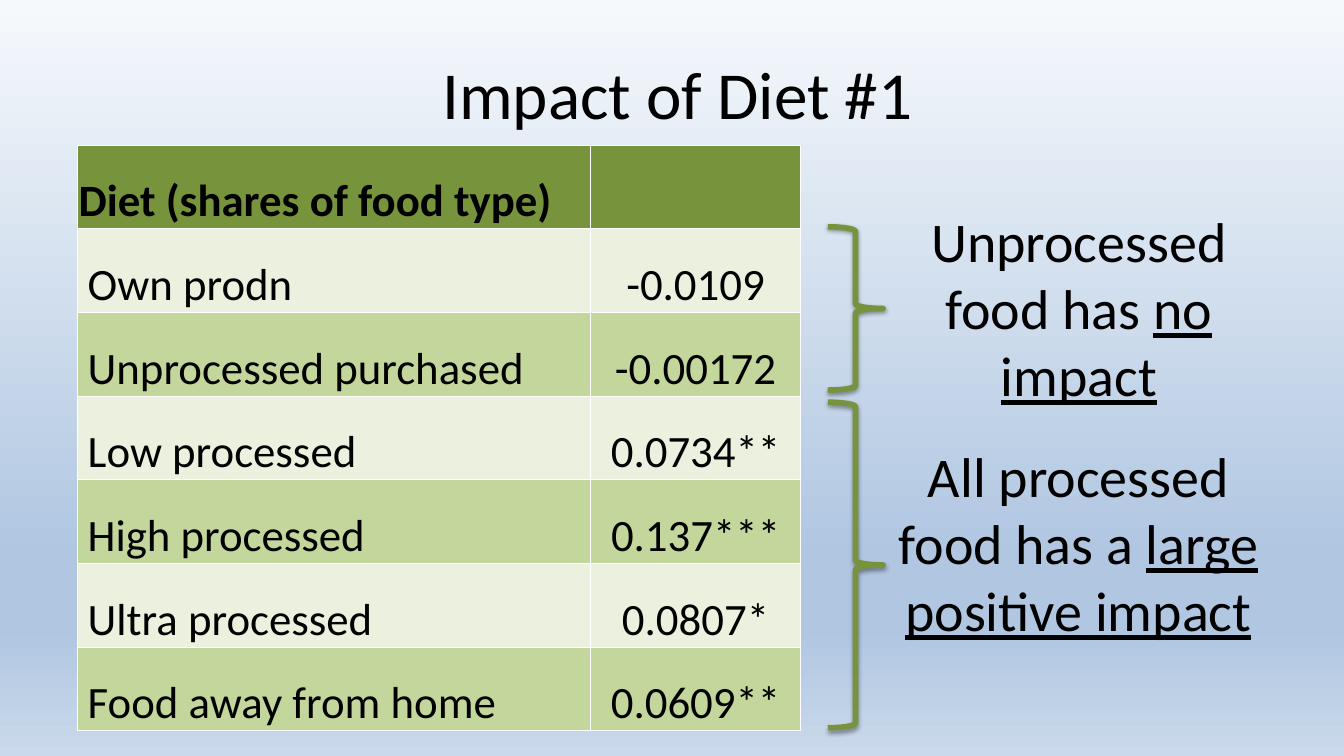
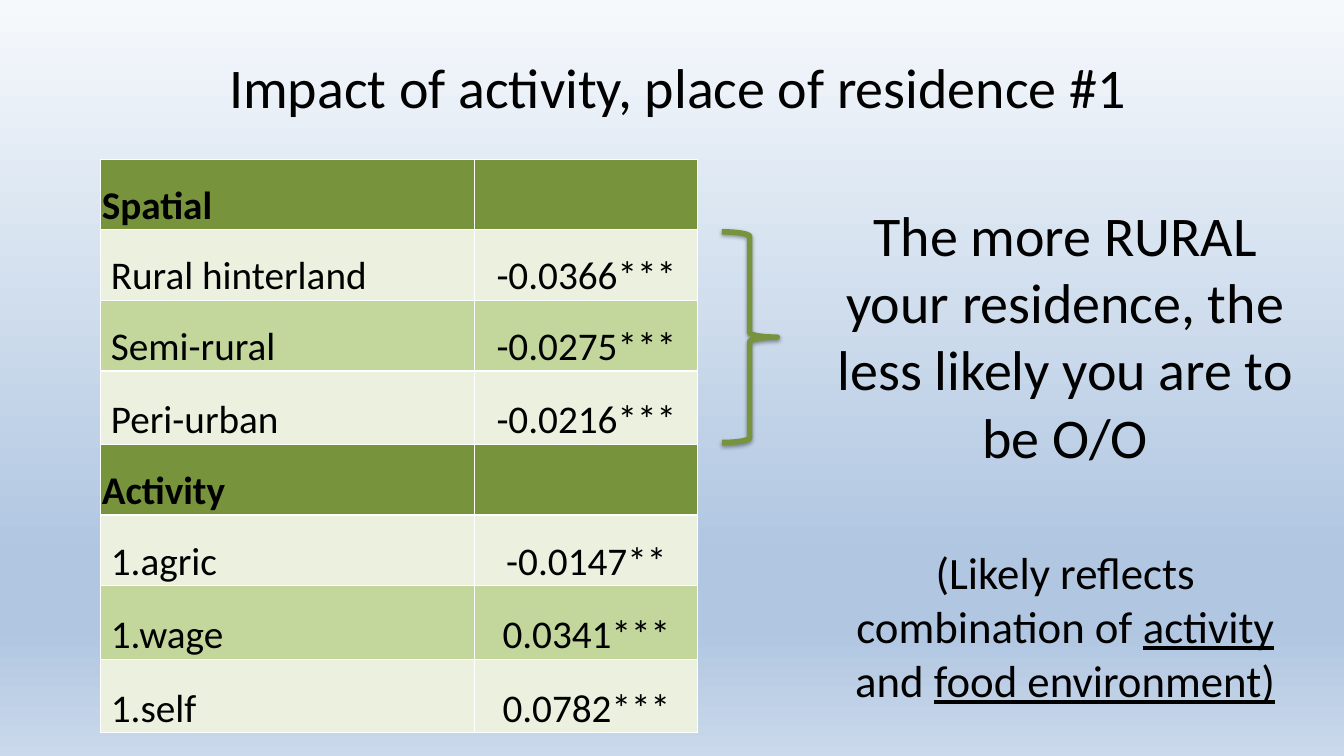
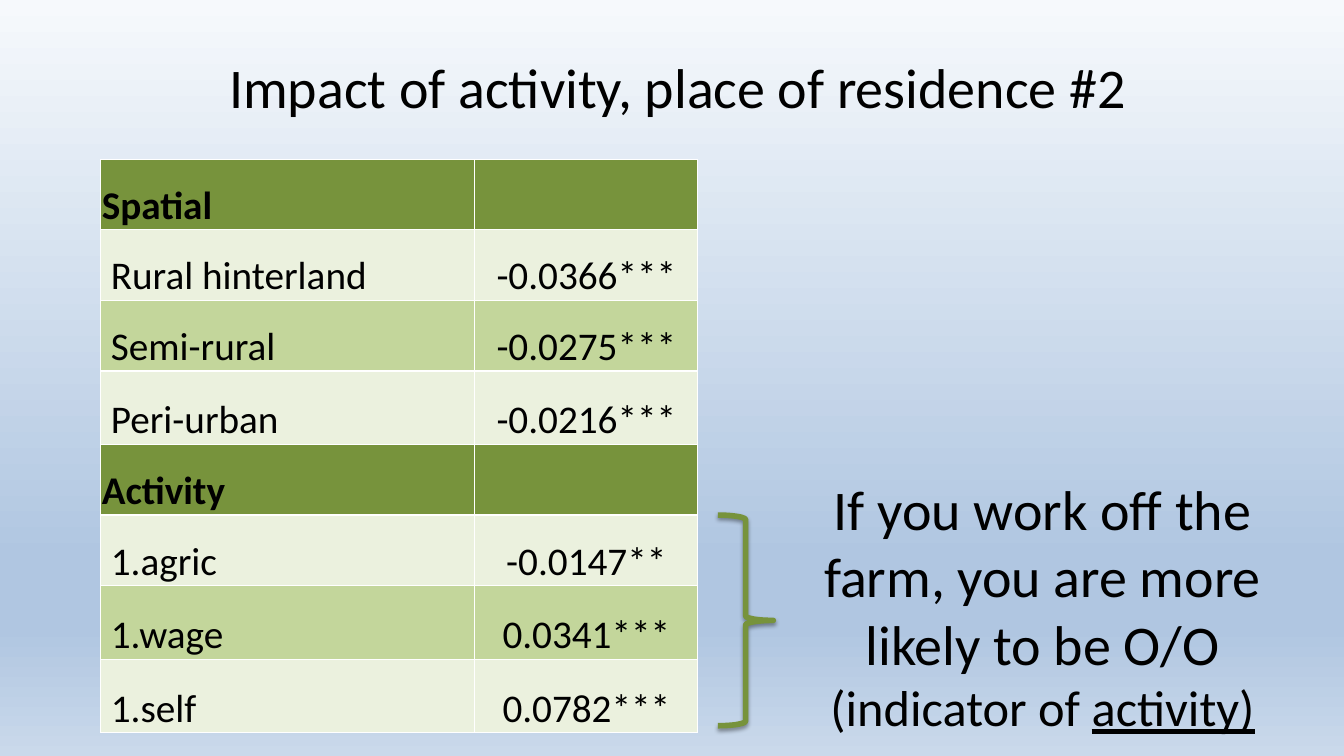
"""Build three slides of regression results with annotated tables."""
from lxml import etree
from pptx import Presentation
from pptx import util as u
from pptx.dml.color import RGBColor
from pptx.enum import shapes, text
from pptx.oxml.ns import qn


class Theme:
    font = "Calibri"
    ink = RGBColor.from_string("000000")
    header = RGBColor.from_string("77933C")
    bands = [RGBColor.from_string(c) for c in ("EBF1DE", "C3D69B")]
    rule = "FFFFFF"
    shadow = "000000"
    sky = [(0, "F6F9FC"), (74, "B0C6E1"), (83, "B0C6E1"), (100, "CAD9EB")]
    title_large, title, note, aside, remark = 48, 40, 40, 36, 32
    cell_large, cell = 32, 28


PX = 9144
CENTER = text.PP_ALIGN.CENTER


def add_color(parent, tag, color, **attrs):
    el = etree.SubElement(parent, qn(tag), attrs)
    holder = el if tag != "a:lnL" and not tag.startswith("a:ln") else etree.SubElement(el, qn("a:solidFill"))
    return etree.SubElement(holder, qn("a:srgbClr"), val=color)


def write(p, runs, size, bold=False, align=CENTER):
    p.alignment = align
    for words, underline in runs:
        r = p.add_run()
        r.text = words
        r.font.name = Theme.font
        r.font.size = u.Pt(size)
        r.font.color.rgb = Theme.ink
        r.font.bold = bold
        r.font.underline = underline


diet = {
    "at": (77, 144), "cols": (509, 208), "heights": [83] * 7, "size": Theme.cell_large,
    "rows": [
        ("Diet (shares of food type)", ""),
        ("Own prodn", "-0.0109"),
        ("Unprocessed purchased", "-0.00172"),
        ("Low processed", "0.0734**"),
        ("High processed", "0.137***"),
        ("Ultra processed", "0.0807*"),
        ("Food away from home", "0.0609**"),
    ],
}
residence = {
    "at": (100, 158), "cols": (371, 221), "heights": [70, 70, 70, 73, 70, 70, 73, 73], "size": Theme.cell,
    "rows": [
        ("Spatial", ""),
        ("Rural hinterland", "-0.0366***"),
        ("Semi-rural", "-0.0275***"),
        ("Peri-urban", "-0.0216***"),
        ("Activity", ""),
        ("1.agric", "-0.0147**"),
        ("1.wage", "0.0341***"),
        ("1.self", "0.0782***"),
    ],
}
slides = [
    ("Impact of Diet #1", Theme.title_large, diet, [
        ((821, 225, 55, 162), (904, 200, 332, 212), [
            (Theme.note, 0, [("Unprocessed food has ", False), ("no impact", True)])]),
        ((821, 399, 55, 323), (878, 433, 383, 279), [
            (Theme.note, 0, [("All processed food has a ", False), ("large positive impact", True)])]),
    ]),
    ("Impact of activity, place of residence #1", Theme.title, residence, [
        ((716, 230, 55, 209), (814, 194, 485, 582), [
            (Theme.note, 0, [("The more RURAL your residence, the less likely you are to be O/O", False)]),
            (Theme.remark, 54, [("(Likely reflects combination of ", False), ("activity", True),
                                (" and ", False), ("food environment)", True)])]),
    ]),
    ("Impact of activity, place of residence #2", Theme.title, residence, [
        ((712, 511, 55, 209), (767, 466, 534, 273), [
            (Theme.note, 0, [("If you work off the farm, you are more likely to be O/O", False)]),
            (Theme.aside, 0, [("(indicator of ", False), ("activity)", True)])]),
    ]),
]

prs = Presentation()
prs.slide_width, prs.slide_height = 1333 * PX, 750 * PX

fill = prs.slide_master.background.fill
fill.gradient()
fill.gradient_angle = 270
stops = prs.slide_master.element.find(".//" + qn("p:bg")).find(".//" + qn("a:gsLst"))
for old in list(stops):
    stops.remove(old)
for position, color in Theme.sky:
    add_color(stops, "a:gs", color, pos=str(position * 1000))

for title, title_size, table, notes in slides:
    s = prs.slides.add_slide(prs.slide_layouts[6])

    sp = s.shapes.add_textbox(*[v * PX for v in (100, 47, 1144, 70)])
    sp.text_frame.word_wrap = True
    write(sp.text_frame.paragraphs[0], [(title, False)], title_size)

    size = [v * PX for v in (*table["at"], sum(table["cols"]), sum(table["heights"]))]
    tbl = s.shapes.add_table(len(table["rows"]), len(table["cols"]), *size).table
    tbl.first_row = tbl.horz_banding = False
    for column, width in zip(tbl.columns, table["cols"]):
        column.width = width * PX
    band = 0
    for row, height, values in zip(tbl.rows, table["heights"], table["rows"]):
        row.height = height * PX
        heading = not values[1]
        band = 0 if heading else band + 1
        for i, (cell, value) in enumerate(zip(row.cells, values)):
            cell.margin_left = (1 if heading or i else 10) * PX
            cell.margin_right = cell.margin_top = PX
            cell.margin_bottom = 0
            cell.vertical_anchor = text.MSO_ANCHOR.BOTTOM
            for side in "LRTB":
                add_color(cell._tc.get_or_add_tcPr(), "a:ln" + side, Theme.rule, w=str(u.Pt(1)))
            cell.fill.solid()
            cell.fill.fore_color.rgb = Theme.header if heading else Theme.bands[(band - 1) % 2]
            if value:
                align = CENTER if i else text.PP_ALIGN.LEFT
                write(cell.text_frame.paragraphs[0], [(value, False)], table["size"], heading, align)

    for brace_at, note_at, paragraphs in notes:
        brace = s.shapes.add_shape(shapes.MSO_SHAPE.RIGHT_BRACE, *[v * PX for v in brace_at])
        brace.fill.background()
        brace.line.color.rgb = Theme.header
        brace.line.width = u.Pt(4)
        brace.shadow.inherit = False
        effects = brace._element.spPr.find(qn("a:effectLst"))
        shade = add_color(effects, "a:outerShdw", Theme.shadow, blurRad="40000", dist="20000",
                          dir="5400000", rotWithShape="0")
        etree.SubElement(shade, qn("a:alpha"), val="38000")

        tf = s.shapes.add_textbox(*[v * PX for v in note_at]).text_frame
        tf.word_wrap = True
        tf.auto_size = text.MSO_AUTO_SIZE.SHAPE_TO_FIT_TEXT
        for i, (points, gap, runs) in enumerate(paragraphs):
            p = tf.add_paragraph() if i else tf.paragraphs[0]
            if gap:
                p.space_before = u.Pt(gap)
            write(p, runs, points)

prs.save("out.pptx")
